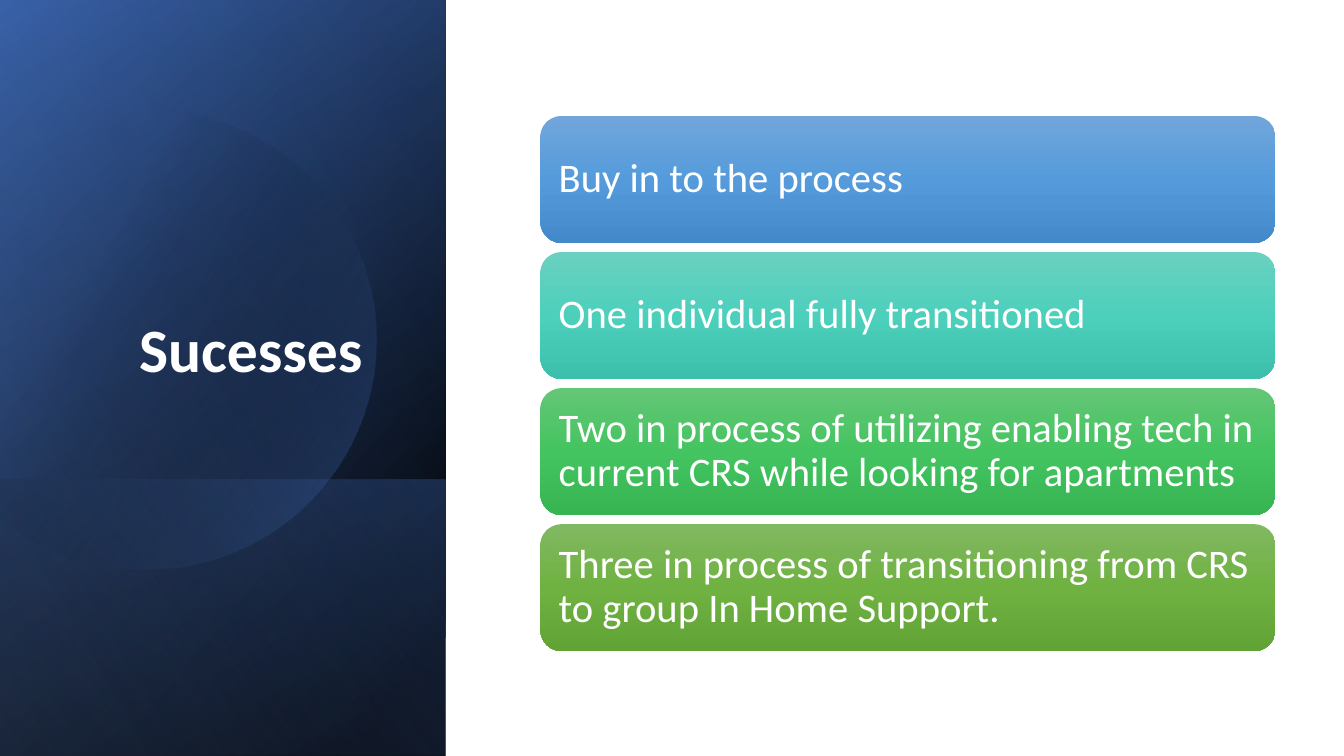
from dataclasses import dataclass
from math import cos, radians, sin

from lxml import etree
from pptx import Presentation
from pptx.dml.color import RGBColor
from pptx.enum import shapes, text
from pptx.oxml.ns import qn
from pptx.util import Inches, Pt


@dataclass(frozen=True)
class Theme:
    font: str = "Calibri"
    title_size: int = 44
    card_size: int = 29
    white: str = "FFFFFF"
    black: str = "000000"
    navy: str = "2F5597"
    blue: str = "4472C4"
    pale_blue: str = "8FAADC"
    cards: tuple = (
        ("71A6DB", "559BDB", "448ACA"),
        ("6AD1C0", "4CD0BC", "3CC0AC"),
        ("64C677", "44C460", "36B552"),
        ("81B861", "6FB242", "62A336"),
    )


THEME = Theme()
CARD_TEXTS = (
    "Buy in to the process",
    "One individual fully transitioned",
    "Two in process of utilizing enabling tech in current CRS while looking for apartments",
    "Three in process of transitioning from CRS to group In Home Support.",
)


def set_gradient(sp, stops, angle):
    """Fill with (position %, colour, opacity %) stops at a clockwise angle."""
    sp.shadow.inherit = False
    sp.line.fill.background()
    sp.fill.gradient()
    sp.fill.gradient_angle = 360 - angle
    stop_list = next(sp._element.spPr.iter(qn("a:gsLst")))
    for old in list(stop_list):
        stop_list.remove(old)
    for position, color, opacity in stops:
        stop = etree.SubElement(stop_list, qn("a:gs"), pos=str(position * 1000))
        rgb = etree.SubElement(stop, qn("a:srgbClr"), val=color)
        if opacity < 100:
            etree.SubElement(rgb, qn("a:alpha"), val=str(opacity * 1000))


def set_text(sp, content, size, bold=False, align=text.PP_ALIGN.LEFT,
             anchor=text.MSO_ANCHOR.MIDDLE, insets=(0.1, 0.05, 0.1, 0.05)):
    tf = sp.text_frame
    tf.word_wrap = True
    tf.auto_size = text.MSO_AUTO_SIZE.NONE
    tf.vertical_anchor = anchor
    tf.margin_left, tf.margin_top, tf.margin_right, tf.margin_bottom = map(Inches, insets)
    p = tf.paragraphs[0]
    p.alignment = align
    p.line_spacing = 0.9
    r = p.add_run()
    r.text = content
    r.font.name = THEME.font
    r.font.size = Pt(size)
    r.font.bold = bold
    r.font.color.rgb = RGBColor.from_string(THEME.white)


def add_panel(s, x, y, w, h, stops, angle):
    """Add a mirrored rectangle, turned a quarter, that covers the given box."""
    sp = s.shapes.add_shape(
        shapes.MSO_SHAPE.RECTANGLE,
        Inches(x + (w - h) / 2), Inches(y + (h - w) / 2), Inches(h), Inches(w))
    sp.rotation = 90
    sp._element.spPr.xfrm.set("flipH", "1")
    set_gradient(sp, stops, angle)


def add_disc(s, cx, cy, radius, cut):
    """Add a disc whose left side is cut off at plus and minus the cut angle."""
    steps = 120
    angles = [radians(-cut + 2 * cut * i / steps) for i in range(steps + 1)]
    points = [(Inches(cx + radius * cos(a)), Inches(cy + radius * sin(a))) for a in angles]
    builder = s.shapes.build_freeform(*points[0])
    builder.add_line_segments(points[1:], close=True)
    sp = builder.convert_to_shape()
    set_gradient(sp, [(29, THEME.black, 0), (100, THEME.blue, 43)], 30)


def add_sidebar(s, x, y, w, h):
    t = THEME
    foot = 2.74
    add_panel(s, x, y, w, h, [(8, t.black, 100), (100, t.navy, 100)], 50)
    add_panel(s, x, y, w, h, [(0, t.black, 0), (99, t.blue, 46)], 30)
    add_panel(s, x, y + h - foot, w, foot, [(2, t.blue, 29), (100, t.black, 30)], 130)
    add_disc(s, x + 1.45, y + 3.37, 2.28, 129.5)
    add_panel(s, x, y, w, h, [(0, t.black, 0), (99, t.pale_blue, 11)], 120)


def add_title(s, x, y, w, h):
    title = s.shapes.title
    title.left, title.top, title.width, title.height = map(Inches, (x, y, w, h))
    set_text(title, "Sucesses", THEME.title_size, bold=True, align=text.PP_ALIGN.RIGHT,
             anchor=text.MSO_ANCHOR.BOTTOM, insets=(0.1, 0.05, 0.45, 0.63))
    s.shapes._spTree.append(title._element)  # bring in front of the sidebar


def add_cards(s, x, y, w, h):
    gap = 0.09
    count = len(CARD_TEXTS)
    card_h = (h - gap * (count - 1)) / count
    for i, (content, colors) in enumerate(zip(CARD_TEXTS, THEME.cards)):
        sp = s.shapes.add_shape(
            shapes.MSO_SHAPE.ROUNDED_RECTANGLE,
            Inches(x), Inches(y + i * (card_h + gap)), Inches(w), Inches(card_h))
        set_gradient(sp, [(p, c, 100) for p, c in zip((0, 50, 100), colors)], 90)
        set_text(sp, content, THEME.card_size, insets=(0.12, 0.12, 0.12, 0.12))


def main():
    prs = Presentation()
    prs.slide_width, prs.slide_height = Inches(13.33), Inches(7.5)
    s = prs.slides.add_slide(prs.slide_layouts[5])
    add_sidebar(s, 0, 0, 4.42, 7.5)
    add_title(s, 0.64, 1.84, 3.41, 2.62)
    add_cards(s, 5.36, 1.15, 7.29, 5.31)
    prs.save("out.pptx")


if __name__ == "__main__":
    main()
